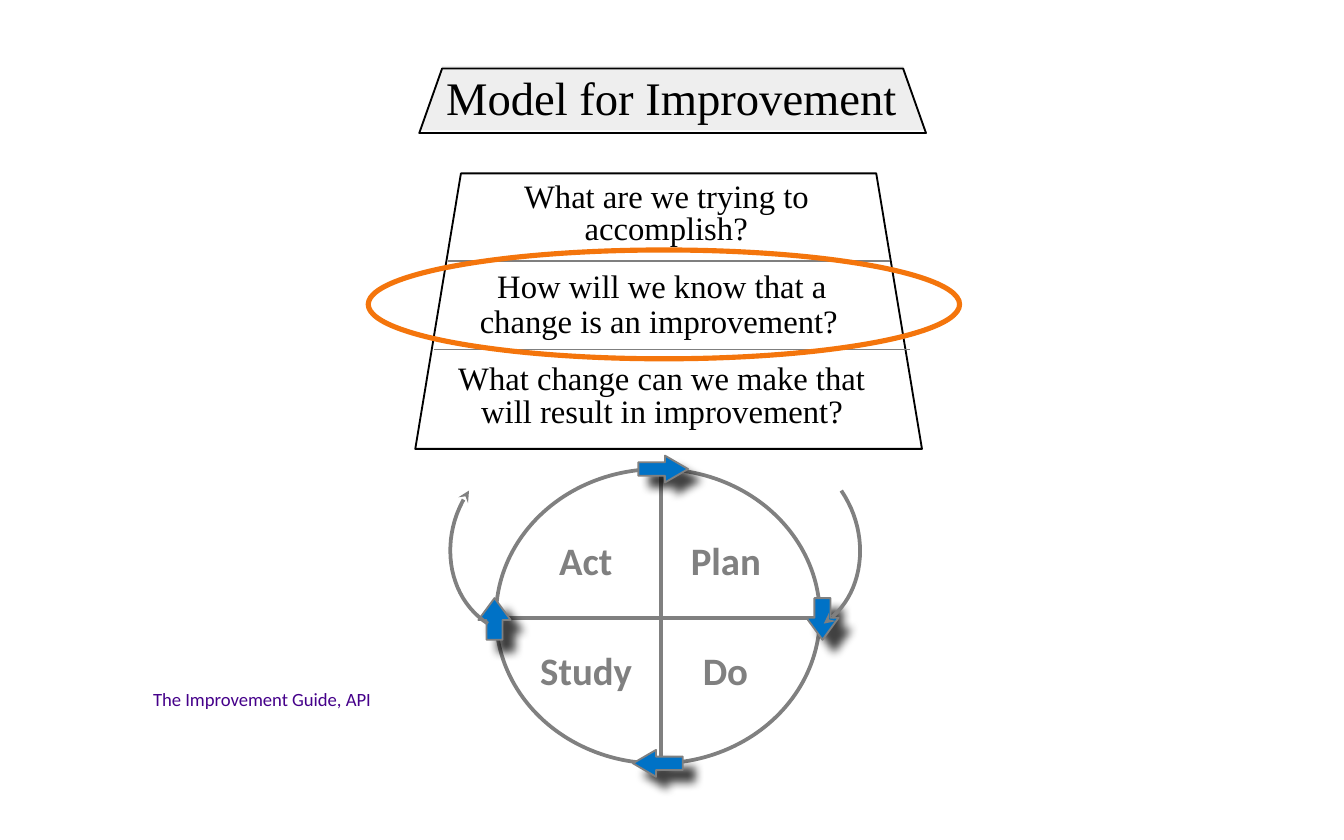
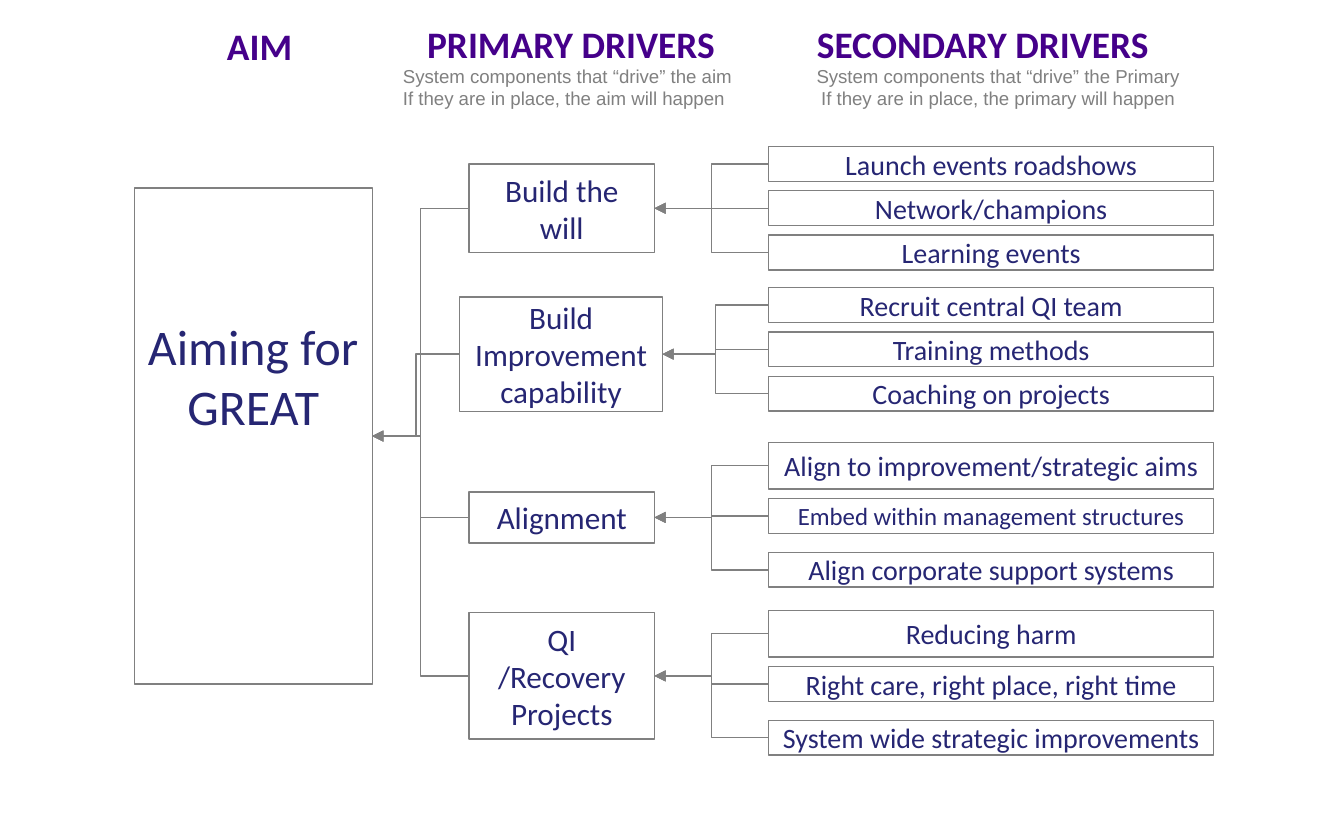
"""Build two slides: the improvement model and its driver diagram."""
from lxml import etree
from pptx import Presentation
from pptx import util as u
from pptx.dml.color import RGBColor
from pptx.enum import shapes, text
from pptx.oxml.ns import qn

INK, GREY, RULE, NAVY, PLUM = "000000", "808080", "7F7F7F", "262673", "45008A"
BLUE, PALE, WHITE, AMBER = "0072C6", "EEEEEE", "FFFFFF", "F4750C"
KIND = shapes.MSO_SHAPE
MID, LEFT = text.PP_ALIGN.CENTER, text.PP_ALIGN.LEFT

STYLE = {
    "title": dict(name="Times New Roman", size=25, color=INK),
    "ask": dict(name="Times New Roman", size=17.5, color=INK),
    "step": dict(name="Calibri", size=20.8, color=GREY, bold=True),
    "cite": dict(name="Calibri", size=10, color=PLUM),
    "head": dict(name="Calibri", size=20, color=PLUM, bold=True),
    "hint": dict(name="Arial", size=10, color=GREY),
    "aim": dict(name="Calibri", size=26.7, color=NAVY),
    "main": dict(name="Calibri", size=16.7, color=NAVY),
    "sub": dict(name="Calibri", size=15, color=NAVY),
    "small": dict(name="Calibri", size=13.3, color=NAVY),
}
PADS = {"title": (0.08, 0.04), "ask": (0.08, 0.04), "step": (0.06, 0.03)}

ASKS = [
    ("What are we trying to", 3.82, 1.27, 2.31),
    ("accomplish?", 4.27, 1.51, 1.39),
    ("How will we know that a", 3.62, 1.94, 2.64),
    ("change is an improvement?", 3.49, 2.2, 2.86),
    ("What change can we make that", 3.33, 2.62, 3.23),
    ("will result in improvement?", 3.5, 2.87, 2.89),
]
STEPS = [("Act", 4.1, 3.96, 0.52), ("Plan", 5.08, 3.96, 0.65),
         ("Study", 3.96, 4.78, 0.81), ("Do", 5.17, 4.78, 0.46)]
TURNS = [
    (KIND.RIGHT_ARROW, (4.75, 3.39, 0.37, 0.2), 0.86),
    (KIND.LEFT_ARROW, (4.71, 5.58, 0.37, 0.2), 0.86),
    (KIND.DOWN_ARROW, (6, 4.45, 0.24, 0.31), 0.68),
    (KIND.UP_ARROW, (3.56, 4.45, 0.24, 0.31), 0.68),
]
ARCS = [
    [(3.63, 4.64), (3.32, 4.44), (3.26, 3.99), (3.49, 3.65)],
    [(6.26, 3.65), (6.49, 3.99), (6.43, 4.44), (6.13, 4.64)],
]
HEADS = [("AIM", 1.59, 0.12, 0.69), ("PRIMARY DRIVERS", 3.08, 0.11, 2.36),
         ("SECONDARY DRIVERS", 5.98, 0.11, 2.69)]
HINTS = [
    (["System components that “drive” the aim",
      "If they are in place, the aim will happen"], 2.9, 2.67, LEFT),
    (["System components that “drive” the Primary",
      "If they are in place, the primary will happen"], 5.96, 2.93, MID),
]
AIM = (1, 1.4, 1.77, 3.69)
EVEN, TALL = [(0, 0.26), (0.33, 0.26), (0.66, 0.26)], [(0, 0.35), (0.42, 0.26), (0.82, 0.26)]
DRIVERS = [
    (["Build the will"], (3.49, 1.22, 1.38, 0.66), 1.09, EVEN,
     ["Launch events roadshows", "Network/champions", "Learning events"]),
    (["Build Improvement capability"], (3.42, 2.21, 1.51, 0.85), 2.14, EVEN,
     ["Recruit central QI team", "Training methods", "Coaching on projects"]),
    (["Alignment"], (3.49, 3.66, 1.38, 0.38), 3.29, TALL,
     ["Align to improvement/strategic aims", "Embed within management structures",
      "Align corporate support systems"]),
    (["QI /Recovery", "Projects"], (3.49, 4.56, 1.38, 0.94), 4.54, TALL,
     ["Reducing harm", "Right care, right place, right time",
      "System wide strategic improvements"]),
]


def cm(*vals):
    return [u.Cm(v * 2.54) for v in vals]


def rgb(hue):
    return RGBColor.from_string(hue)


def node(base, tag, **atts):
    return etree.SubElement(base, qn(tag), {k: str(v) for k, v in atts.items()})


def stroke(line, hue, width):
    line.color.rgb = rgb(hue)
    line.width = u.Pt(width)


def tip(shape, kind):
    node(shape.element.spPr.find(qn("a:ln")), "a:tailEnd", type=kind)


def dress(shape, fill, hue, width):
    shape.shadow.inherit = False
    if fill:
        shape.fill.solid()
        shape.fill.fore_color.rgb = rgb(fill)
    else:
        shape.fill.background()
    if hue:
        stroke(shape.line, hue, width)
    else:
        shape.line.fill.background()
    return shape


def block(slide, kind, box, fill=None, hue=GREY, width=0.75):
    return dress(slide.shapes.add_shape(kind, *cm(*box)), fill, hue, width)


def trace(slide, pts, shut, fill=None, hue=INK, width=1):
    pts = [cm(*p) for p in pts]
    path = slide.shapes.build_freeform(*pts[0])
    path.add_line_segments(pts[1:], close=shut)
    return dress(path.convert_to_shape(), fill, hue, width)


def link(slide, kind, start, end, hue=GREY, width=0.75):
    line = slide.shapes.add_connector(kind, *cm(*start, *end))
    stroke(line.line, hue, width)
    node(line.element.spPr, "a:effectLst")
    return line


def write(shape, rows, style, align, wrap):
    frame = shape.text_frame
    side, edge = cm(*PADS.get(style, (0.1, 0.05)))
    form = dict(word_wrap=wrap, margin_left=side, margin_right=side,
                margin_top=edge, margin_bottom=edge)
    for key, val in form.items():
        setattr(frame, key, val)
    for i, row in enumerate(rows):
        para = frame.add_paragraph() if i else frame.paragraphs[0]
        para.alignment = align
        run = para.add_run()
        run.text = row
        for key, val in STYLE[style].items():
            if key == "color":
                run.font.color.rgb = rgb(val)
            else:
                setattr(run.font, key, u.Pt(val) if key == "size" else val)
    return frame


def label(slide, rows, box, style, align=LEFT):
    frame = write(slide.shapes.add_textbox(*cm(*box)), rows, style, align, False)
    frame.auto_size = text.MSO_AUTO_SIZE.SHAPE_TO_FIT_TEXT


def card(slide, rows, box, style, wrap=True):
    frame = write(block(slide, KIND.RECTANGLE, box), rows, style, MID, wrap)
    frame.vertical_anchor = text.MSO_ANCHOR.MIDDLE
    return frame


def trap(left, top, wide, high, slope):
    right, base = left + wide, top + high
    return [(left + slope, top), (right - slope, top), (right, base), (left, base)]


def curve(pts, steps=24):
    def spot(t):
        mix = ((1 - t) ** 3, 3 * t * (1 - t) ** 2, 3 * t * t * (1 - t), t ** 3)
        return [sum(m * v for m, v in zip(mix, axis)) for axis in zip(*pts)]
    return [spot(i / steps) for i in range(steps + 1)]


def join(slide, source, goal):
    (x, y, _, h), (gx, gy, gw, gh) = source, goal
    line = link(slide, shapes.MSO_CONNECTOR.ELBOW, (x, y + h / 2), (gx + gw, gy + gh / 2))
    tip(line, "triangle")


def model(slide):
    rule = shapes.MSO_CONNECTOR.STRAIGHT
    trace(slide, trap(3.09, 1.29, 3.77, 2.05, 0.34), True)
    link(slide, rule, (3.33, 1.94), (6.62, 1.94), RULE, 1)
    link(slide, rule, (3.23, 2.6), (6.77, 2.6), RULE, 1)
    for row, x, y, w in ASKS:
        label(slide, [row], (x, y, w, 0.38), "ask")
    trace(slide, trap(3.12, 0.49, 3.77, 0.48, 0.17), True, PALE, None)
    trace(slide, trap(3.12, 0.51, 3.77, 0.48, 0.17), True)
    label(slide, ["Model for Improvement"], (3.24, 0.47, 3.57, 0.51), "title")
    block(slide, KIND.OVAL, (3.69, 3.49, 2.41, 2.19), WHITE, GREY, 2)
    link(slide, rule, (4.92, 3.49), (4.92, 5.68), GREY, 2)
    for row, x, y, w in STEPS:
        label(slide, [row], (x, y, w, 0.41), "step")
    link(slide, rule, (3.67, 4.6), (6.2, 4.6), GREY, 2)
    for kind, box, point in TURNS:
        arrow = block(slide, kind, box, BLUE, GREY, 1)
        arrow.adjustments[0], arrow.adjustments[1] = 0.5, point
        cast = node(arrow.element.spPr.find(qn("a:effectLst")), "a:outerShdw",
                    blurRad=u.Pt(5), dist=u.Pt(8.5), dir=45 * 60000, rotWithShape=0)
        node(node(cast, "a:srgbClr", val=INK), "a:alpha", val=75000)
    for arc in ARCS:
        tip(trace(slide, curve(arc), False, None, GREY, 2), "stealth")
    label(slide, ["The Improvement Guide, API"], (1.04, 5.07, 1.85, 0.27), "cite")
    block(slide, KIND.OVAL, (2.74, 1.86, 4.4, 0.81), None, AMBER, 2.75)


def tree(slide):
    frame = card(slide, ["Aiming for", "GREAT"], AIM, "aim")
    frame.margin_bottom = u.Cm(2.41)
    for rows, box, top, grid, subs in DRIVERS:
        card(slide, rows, box, "main")
        join(slide, box, AIM)
        for row, (drop, high) in zip(subs, grid):
            leaf = (5.72, top + drop, 3.31, high)
            card(slide, [row], leaf, "small" if row.startswith("Embed") else "sub", False)
            join(slide, leaf, box)
    for row, x, y, w in HEADS:
        label(slide, [row], (x, y, w, 0.44), "head")
    for rows, x, w, align in HINTS:
        label(slide, rows, (x, 0.43, w, 0.44), "hint", align)


def main():
    deck = Presentation()
    deck.slide_width, deck.slide_height = cm(10, 6.25)
    for draw in (model, tree):
        draw(deck.slides.add_slide(deck.slide_layouts[6]))
    deck.save("out.pptx")


if __name__ == "__main__":
    main()
